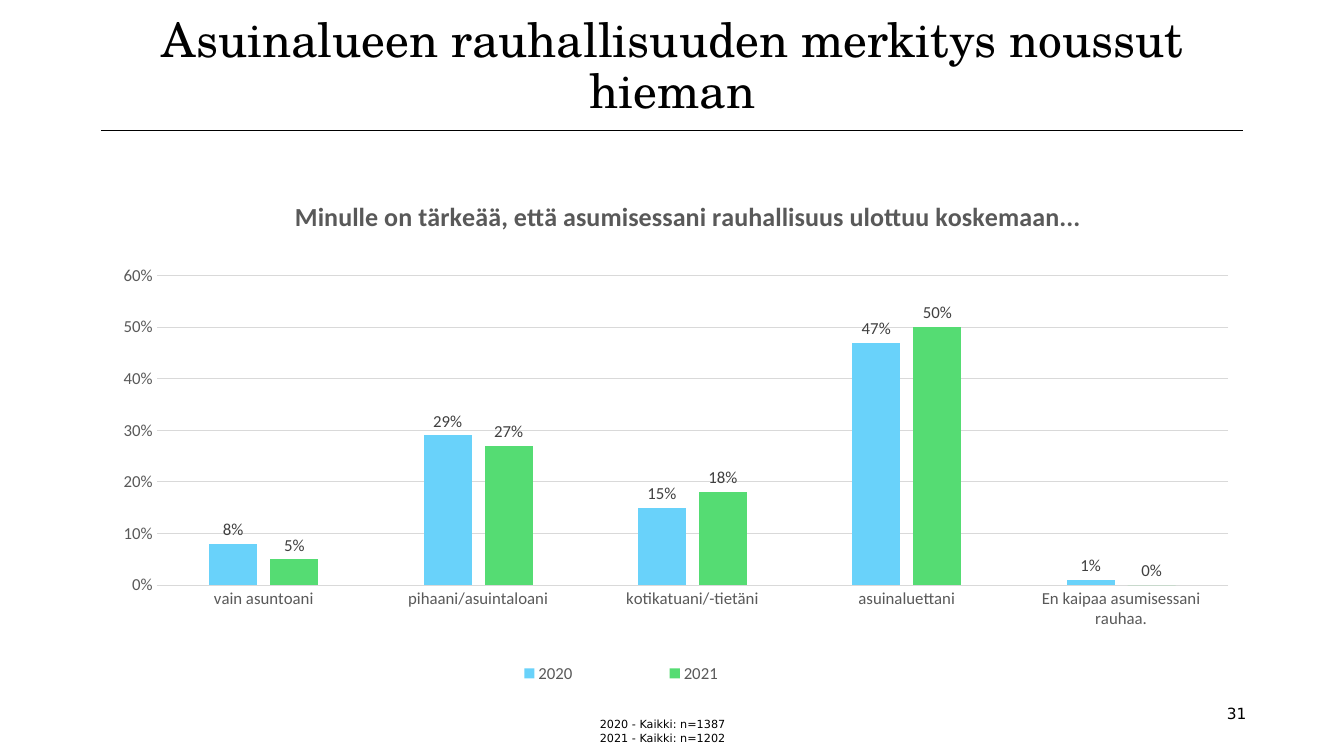
"""Build a slide comparing how far residents want quietness to reach."""
import lxml.etree
import pptx
import pptx.chart.data
import pptx.dml.color
import pptx.enum.chart
import pptx.enum.shapes
import pptx.enum.text
import pptx.oxml.ns
import pptx.util

RGBColor = pptx.dml.color.RGBColor
BLACK = RGBColor(0x00, 0x00, 0x00)
GREY = RGBColor(0x59, 0x59, 0x59)
LABEL_GREY = RGBColor(0x40, 0x40, 0x40)
GRID_GREY = RGBColor(0xD9, 0xD9, 0xD9)
BLUE = RGBColor(0x69, 0xD2, 0xFA)
GREEN = RGBColor(0x55, 0xDC, 0x73)

ALIGN = pptx.enum.text.PP_ALIGN
ANCHOR = pptx.enum.text.MSO_ANCHOR
TICK = pptx.enum.chart.XL_TICK_MARK

CATEGORIES = ["vain asuntoani", "pihaani/asuintaloani", "kotikatuani/-tietäni",
              "asuinaluettani", "En kaipaa asumisessani rauhaa."]
SERIES = [("2020", BLUE, [0.08, 0.29, 0.15, 0.47, 0.01]),
          ("2021", GREEN, [0.05, 0.27, 0.18, 0.5, 0])]


def style_font(font, size, color, name):
    font.size = pptx.util.Pt(size)
    font.color.rgb = color
    font.name = name


def write_text(frame, text, size, color=BLACK, name="DejaVu Sans", align=ALIGN.LEFT,
               anchor=ANCHOR.TOP, margin=None, spacing=None, gap=0):
    frame.word_wrap = True
    frame.vertical_anchor = anchor
    if margin is not None:
        frame.margin_left = frame.margin_right = margin
        frame.margin_top = frame.margin_bottom = margin
    for index, line in enumerate(text.split("\n")):
        para = frame.add_paragraph() if index else frame.paragraphs[0]
        para.alignment = align
        para.line_spacing = spacing
        para.space_before = para.space_after = pptx.util.Pt(gap)
        span = para.add_run()
        span.text = line
        style_font(span.font, size, color, name)


def set_layout(element, index, inner=False, **shares):
    tag = pptx.oxml.ns.qn
    for old in element.findall(tag("c:layout")):
        element.remove(old)
    layout = lxml.etree.Element(tag("c:layout"))
    manual = lxml.etree.SubElement(layout, tag("c:manualLayout"))
    settings = [("layoutTarget", "inner")] if inner else []
    settings += [("xMode", "edge"), ("yMode", "edge"), *shares.items()]
    for name, value in settings:
        lxml.etree.SubElement(manual, tag("c:" + name)).set("val", str(value))
    element.insert(index, layout)


class SlideBuilder:
    """Hold the deck, its chart style and the current slide."""

    chart_font = "Calibri"
    chart_size = 12

    def __init__(self, width, height):
        self.deck = pptx.Presentation()
        self.deck.slide_width = pptx.util.Inches(width)
        self.deck.slide_height = pptx.util.Inches(height)
        self.page = self.deck.slides.add_slide(self.deck.slide_layouts[6])

    def across(self, percent):
        return round(self.deck.slide_width * percent / 100)

    def down(self, percent):
        return round(self.deck.slide_height * percent / 100)

    def area(self, left, top, width, height):
        return self.across(left), self.down(top), self.across(width), self.down(height)

    def text(self, area, text, **style):
        box = self.page.shapes.add_textbox(*self.area(*area))
        write_text(box.text_frame, text, **style)

    def rule(self, left, right, top):
        line = self.page.shapes.add_connector(
            pptx.enum.shapes.MSO_CONNECTOR.STRAIGHT,
            self.across(left), self.down(top), self.across(right), self.down(top))
        line.line.color.rgb = BLACK
        line.line.width = pptx.util.Pt(0.5)
        properties = line._element.spPr
        lxml.etree.SubElement(properties, pptx.oxml.ns.qn("a:effectLst"))

    def chart_text(self, font, color=GREY):
        style_font(font, self.chart_size, color, self.chart_font)

    def column_chart(self, area, title, categories, series):
        data = pptx.chart.data.CategoryChartData(number_format="0%")
        data.categories = categories
        for name, _, values in series:
            data.add_series(name, values)
        chart = self.page.shapes.add_chart(
            pptx.enum.chart.XL_CHART_TYPE.COLUMN_CLUSTERED, *self.area(*area), data).chart
        style_font(chart.font, 10, BLACK, self.chart_font)

        write_text(chart.chart_title.text_frame, title, size=18.6, color=GREY,
                   name=self.chart_font, align=ALIGN.CENTER)
        set_layout(chart.chart_title._element, 1, x=0.165, y=0.035)
        set_layout(chart._chartSpace.chart.plotArea, 0, inner=True,
                   x=0.048, y=0.194, w=0.939, h=0.6)

        chart.has_legend = True
        chart.legend.position = pptx.enum.chart.XL_LEGEND_POSITION.BOTTOM
        chart.legend.include_in_layout = False
        self.chart_text(chart.legend.font)
        set_layout(chart.legend._element, 1, x=0.29, y=0.935, w=0.33, h=0.06)

        for axis in (chart.category_axis, chart.value_axis):
            axis.major_tick_mark = axis.minor_tick_mark = TICK.NONE
            self.chart_text(axis.tick_labels.font)
        scale = chart.value_axis
        scale.minimum_scale, scale.maximum_scale, scale.major_unit = 0, 0.6, 0.1
        scale.tick_labels.number_format = "0%"
        scale.tick_labels.number_format_is_linked = False
        scale.format.line.fill.background()
        for line in (chart.category_axis.format.line, scale.major_gridlines.format.line):
            line.color.rgb = GRID_GREY
            line.width = pptx.util.Pt(0.75)

        plot = chart.plots[0]
        plot.gap_width, plot.overlap = 219, -27
        plot.vary_by_categories = False
        for columns, (_, color, _) in zip(plot.series, series):
            columns.format.fill.solid()
            columns.format.fill.fore_color.rgb = color
            labels = columns.data_labels
            labels.show_value = True
            labels.number_format = "0%"
            labels.number_format_is_linked = False
            labels.position = pptx.enum.chart.XL_LABEL_POSITION.OUTSIDE_END
            self.chart_text(labels.font, LABEL_GREY)


def main():
    builder = SlideBuilder(13.33, 7.5)
    builder.rule(7.5, 92.5, 17.2)
    builder.text((67, 92.27, 26.48, 4.13), "31", size=11, align=ALIGN.RIGHT,
                 anchor=ANCHOR.MIDDLE, gap=10)
    builder.text((7.58, 3.87, 84.92, 11.87),
                 "Asuinalueen rauhallisuuden merkitys noussut hieman",
                 size=34, name="TeX Gyre Schola", align=ALIGN.CENTER,
                 anchor=ANCHOR.BOTTOM, margin=0, spacing=0.9, gap=10)
    builder.column_chart(
        (7.58, 23.2, 84.92, 68.27),
        "Minulle on tärkeää, että asumisessani rauhallisuus ulottuu koskemaan...",
        CATEGORIES, SERIES)
    builder.text((43.89, 94.27, 12.3, 6.67 - 0.94),
                 "2020 - Kaikki: n=1387\n2021 - Kaikki: n=1202", size=8)
    builder.deck.save("out.pptx")


if __name__ == "__main__":
    main()
